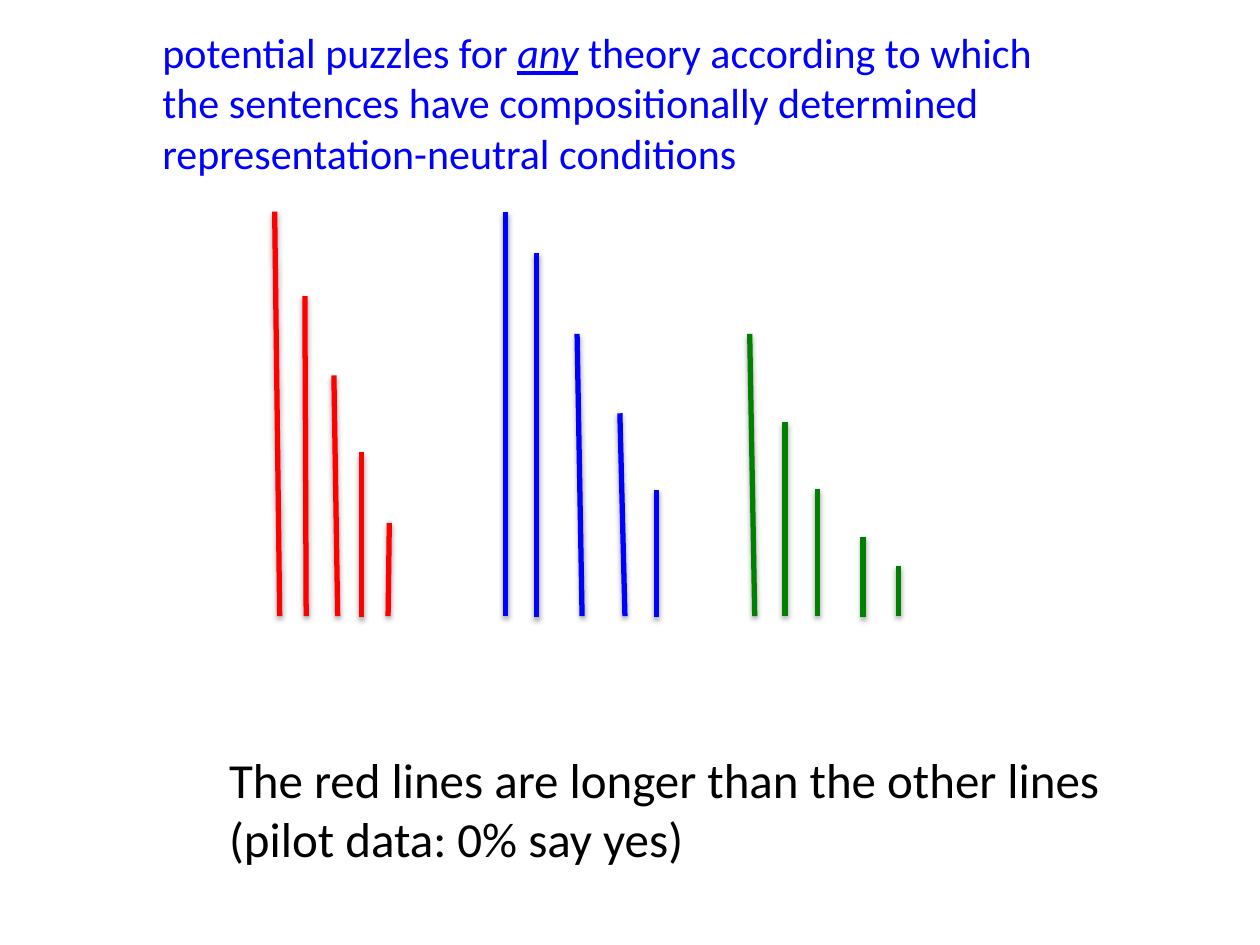
import dataclasses

import lxml.etree
import pptx
import pptx.dml.color
import pptx.enum.shapes
import pptx.enum.text
import pptx.oxml
import pptx.oxml.ns
import pptx.util

Inches, Pt = pptx.util.Inches, pptx.util.Pt
RGB = pptx.dml.color.RGBColor.from_string


@dataclasses.dataclass(frozen=True)
class Theme:
    font: str = "Calibri"
    red: str = "FF0000"
    blue: str = "0000FF"
    green: str = "008000"
    black: str = "000000"
    heading: int = 24
    sentence: int = 28
    stroke: int = 3


theme = Theme()

SHADOW = (
    f'<a:effectLst {pptx.oxml.ns.nsdecls("a")}>'
    f'<a:outerShdw blurRad="{Pt(3.1)}" dist="{Pt(1.6)}" dir="5400000" rotWithShape="0">'
    f'<a:srgbClr val="{theme.black}"><a:alpha val="38000"/></a:srgbClr>'
    '</a:outerShdw></a:effectLst>'
)


def add_text(s, box, paragraphs, size, color):
    """Add a text box; each paragraph is a list of (text, emphasised) runs."""
    sp = s.shapes.add_textbox(*[Inches(v) for v in box])
    tf = sp.text_frame
    tf.word_wrap = True
    tf.auto_size = pptx.enum.text.MSO_AUTO_SIZE.SHAPE_TO_FIT_TEXT
    for i, runs in enumerate(paragraphs):
        p = tf.paragraphs[0] if i == 0 else tf.add_paragraph()
        for text, emphasised in runs:
            r = p.add_run()
            r.text = text
            r.font.name = theme.font
            r.font.size = Pt(size)
            r.font.color.rgb = RGB(color)
            if emphasised:
                r.font.italic = r.font.underline = True


prs = pptx.Presentation()
prs.slide_width, prs.slide_height = Inches(10), Inches(7.5)
s = prs.slides.add_slide(prs.slide_layouts[6])

# Line groups: (top x, top y, bottom x, bottom y)
groups = {
    theme.red: [
        (2.18, 1.68, 2.22, 4.89), (2.42, 2.35, 2.43, 4.89), (2.65, 2.98, 2.68, 4.89),
        (2.87, 3.59, 2.87, 4.9), (3.09, 4.15, 3.08, 4.89),
    ],
    theme.blue: [
        (4.01, 1.68, 4.01, 4.89), (4.26, 2.01, 4.26, 4.9), (4.58, 2.65, 4.62, 4.89),
        (4.92, 3.28, 4.96, 4.89), (5.21, 3.89, 5.21, 4.9),
    ],
    theme.green: [
        (5.95, 2.65, 5.99, 4.89), (6.23, 3.35, 6.23, 4.89), (6.49, 3.88, 6.49, 4.89),
        (6.85, 4.26, 6.85, 4.9), (7.13, 4.49, 7.13, 4.89),
    ],
}
for color, lines in groups.items():
    for ends in lines:
        sp = s.shapes.add_connector(
            pptx.enum.shapes.MSO_CONNECTOR.STRAIGHT, *[Inches(v) for v in ends])
        sp.line.color.rgb = RGB(color)
        sp.line.width = Pt(theme.stroke)
        sp._element.spPr.append(pptx.oxml.parse_xml(SHADOW))

# Test sentence and pilot result
add_text(s, (1.72, 5.9, 7.11, 1.04), [
    [("The red lines are longer than the other lines", False)],
    [("(pilot data: 0% say yes)", False)],
], theme.sentence, theme.black)

# Heading
add_text(s, (1.19, 0.16, 8.05, 1.31), [
    [("potential puzzles for ", False), ("any", True),
     (" theory according to which", False)],
    [("the sentences have compositionally determined "
      "representation-neutral conditions", False)],
], theme.heading, theme.blue)

prs.save("out.pptx")
